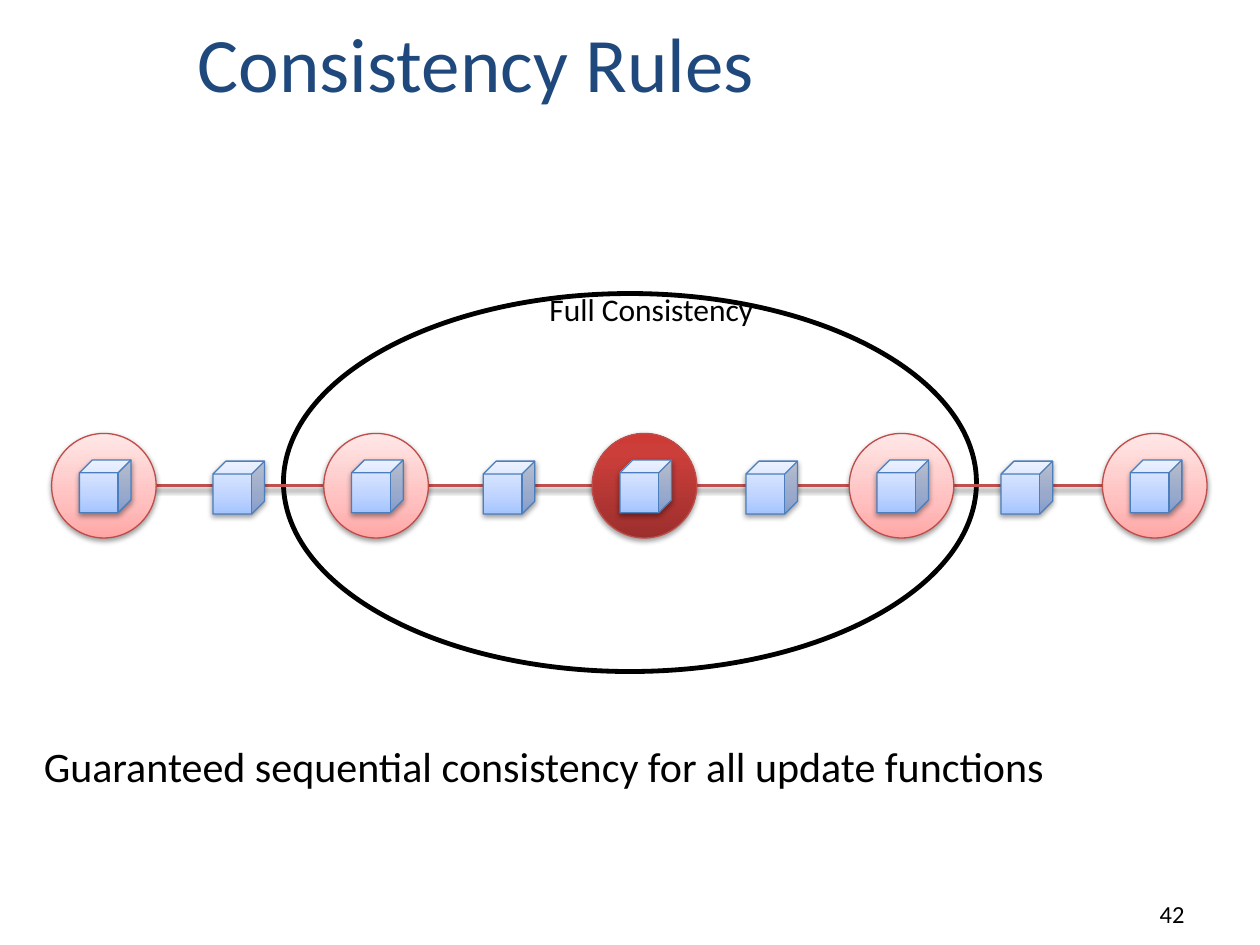
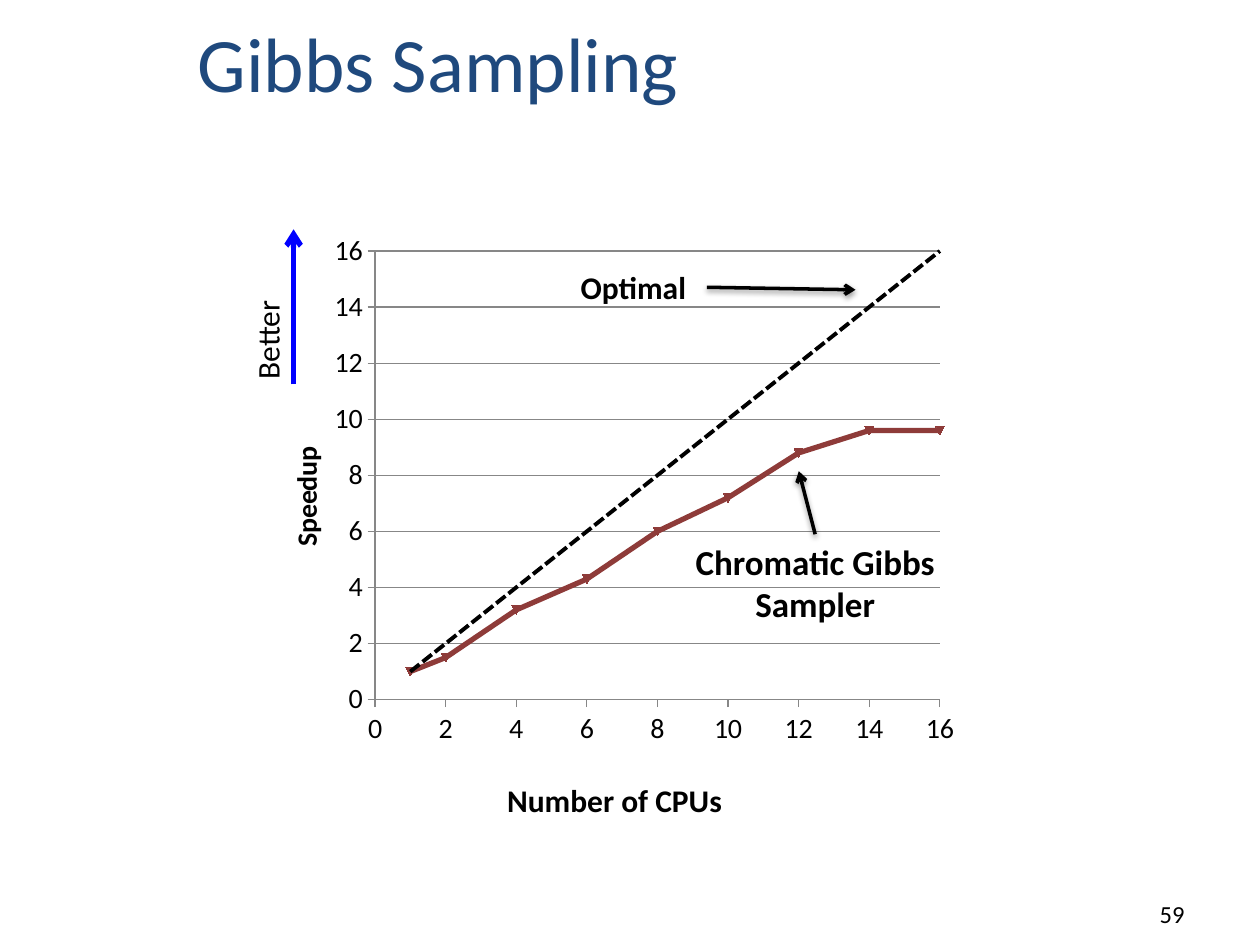
from lxml import etree
from pptx import Presentation
from pptx.chart.data import XyChartData
from pptx.dml.color import RGBColor
from pptx.enum import chart as ch, dml, shapes, text
from pptx.oxml import parse_xml
from pptx.oxml.ns import nsdecls, qn
from pptx.util import Inches, Pt

FONT = "Calibri"
COLORS = {
    "title": "1F497D", "text": "000000", "white": "FFFFFF", "edge": "C0504D",
    "vertex_line": "BF4C48", "cube_line": "4B7EBC", "better": "0000FF",
    "sampler": "8E3B39", "axis": "878787",
}
GRADIENTS = {
    "vertex": ((0, "FFA6A5"), (35, "FFC0BF"), (100, "FFE7E7")),
    "center": ((0, "9C2F2D"), (80, "CB3E3A"), (100, "CE3B37")),
    "cube": ((0, "A4C4FF"), (35, "BFD4FF"), (100, "E6EEFF")),
}
LEFT, CENTER, RIGHT = text.PP_ALIGN.LEFT, text.PP_ALIGN.CENTER, text.PP_ALIGN.RIGHT


def rgb(name):
    """Return a palette colour."""
    return RGBColor.from_string(COLORS[name])


def inches(*lengths):
    """Convert lengths to Inches."""
    return [Inches(n) for n in lengths]


def style_font(font, size, color="text", bold=False):
    """Set the deck's font with a size, colour and weight."""
    font.name, font.size, font.bold = FONT, Pt(size), bold
    font.color.rgb = rgb(color)


def style_line(line, color, width):
    """Set a solid line."""
    line.color.rgb = rgb(color)
    line.width = Pt(width)


def set_effects(sp, shadow=True):
    """Give a shape or connector a soft drop shadow, or none."""
    effects = etree.SubElement(sp._element.spPr, qn("a:effectLst"))
    if shadow:
        effects.append(parse_xml(
            f'<a:outerShdw {nsdecls("a")} blurRad="40000" dist="20000" dir="5400000" '
            'rotWithShape="0"><a:srgbClr val="000000"><a:alpha val="38000"/>'
            '</a:srgbClr></a:outerShdw>'))


def fill_gradient(sp, stops):
    """Fill a shape with a gradient running from bottom to top."""
    sp.fill.background()
    spPr = sp._element.spPr
    gs = "".join(f'<a:gs pos="{pos * 1000}"><a:srgbClr val="{color}"/></a:gs>'
                 for pos, color in stops)
    spPr.replace(spPr.find(qn("a:noFill")), parse_xml(
        f'<a:gradFill {nsdecls("a")} rotWithShape="1"><a:gsLst>{gs}</a:gsLst>'
        '<a:lin ang="16200000" scaled="0"/></a:gradFill>'))


def add_label(s, box, lines, size, bold=False, align=LEFT, wrap=True,
              anchor=text.MSO_ANCHOR.TOP):
    """Add a text box with one paragraph per line."""
    sp = s.shapes.add_textbox(*inches(*box))
    tf = sp.text_frame
    tf.word_wrap, tf.vertical_anchor = wrap, anchor
    tf.text = "\n".join(lines)
    for p in tf.paragraphs:
        p.alignment = align
        style_font(p.font, size, bold=bold)
    return sp


def add_line(s, start, end, color, width, arrow=False, shadow=True):
    """Add a straight line or arrow."""
    sp = s.shapes.add_connector(shapes.MSO_CONNECTOR.STRAIGHT, *inches(*start, *end))
    style_line(sp.line, color, width)
    if arrow:
        etree.SubElement(sp.line._get_or_add_ln(), qn("a:tailEnd"), type="arrow")
    set_effects(sp, shadow)


def add_glossy(s, kind, box, gradient, line):
    """Add a gradient shape with a thin outline and a shadow."""
    sp = s.shapes.add_shape(kind, *inches(*box))
    fill_gradient(sp, GRADIENTS[gradient])
    style_line(sp.line, line, 0.75)
    set_effects(sp)


def add_cube(s, x, y):
    """Add one data cube."""
    add_glossy(s, shapes.MSO_SHAPE.CUBE, (x, y, 0.41, 0.42), "cube", "cube_line")


def add_base(prs, title, number):
    """Add a slide with its title and page number."""
    s = prs.slides.add_slide(prs.slide_layouts.get_by_name("Title Only"))
    sp = s.shapes.title
    sp.left, sp.top, sp.width, sp.height = inches(1.47, 0.08, 8.2, 0.83)
    tf = sp.text_frame
    tf.text = title
    tf.vertical_anchor = text.MSO_ANCHOR.BOTTOM
    tf.auto_size = text.MSO_AUTO_SIZE.NONE
    p = tf.paragraphs[0]
    p.alignment = LEFT
    style_font(p.font, 44, "title")
    add_label(s, (7.42, 6.92, 2.08, 0.5), [number], 14, align=RIGHT,
              anchor=text.MSO_ANCHOR.BOTTOM)
    return s


def add_scope(s, x, y, w, h):
    """Outline the consistency scope and name it."""
    sp = s.shapes.add_shape(shapes.MSO_SHAPE.OVAL, *inches(x, y, w, h))
    sp.fill.solid()
    sp.fill.fore_color.rgb = rgb("white")
    style_line(sp.line, "text", 2.75)
    sp.shadow.inherit = False
    add_label(s, (x + 0.92, y - 0.08, 4, 0.4), ["Full Consistency"], 18,
              align=CENTER, wrap=False)


def add_graph(s, x, y, offsets, size=0.83):
    """Draw a chain of vertices with a cube on each vertex and edge."""
    mid = y + size / 2
    add_line(s, (x + size, mid), (x + offsets[-1], mid), "edge", 2)
    for i, offset in enumerate(offsets):
        gradient = "center" if i == len(offsets) // 2 else "vertex"
        add_glossy(s, shapes.MSO_SHAPE.OVAL, (x + offset, y, size, size),
                   gradient, "vertex_line")
        add_cube(s, x + offset + 0.22, y + 0.21)
    for a, b in zip(offsets, offsets[1:]):
        add_cube(s, x + (a + b) / 2 + 0.2, y + 0.22)


def place(element, before, x, y, w=None, h=None):
    """Add a manual chart layout ahead of the named children."""
    sizes = "" if w is None else f'<c:w val="{w}"/><c:h val="{h}"/>'
    target = '<c:layoutTarget val="inner"/>' if sizes else ""
    for old in element.findall(qn("c:layout")):
        element.remove(old)
    layout = parse_xml(
        f'<c:layout {nsdecls("c")}><c:manualLayout>{target}<c:xMode val="edge"/>'
        f'<c:yMode val="edge"/><c:x val="{x}"/><c:y val="{y}"/>{sizes}'
        '</c:manualLayout></c:layout>')
    follower = next(e for e in element if e.tag in [qn(t) for t in before])
    follower.addprevious(layout)


def style_axis(axis, title, size, x, y):
    """Scale an axis from 0 to 16 and title it."""
    axis.minimum_scale, axis.maximum_scale, axis.major_unit = 0, 16, 2
    axis.major_tick_mark = ch.XL_TICK_MARK.OUTSIDE
    axis.minor_tick_mark = ch.XL_TICK_MARK.NONE
    style_line(axis.format.line, "axis", 0.75)
    style_font(axis.tick_labels.font, 16)
    axis.tick_labels.number_format = "General"
    axis.tick_labels.number_format_is_linked = False
    tf = axis.axis_title.text_frame
    tf.text = title
    style_font(tf.paragraphs[0].font, size, bold=True)
    place(axis.axis_title._element, ["c:overlay", "c:spPr", "c:txPr"], x, y)


def add_speedup_chart(s, x, y, w, h):
    """Plot optimal and measured speedup against CPUs."""
    cpus = [1, 2, 4, 6, 8, 10, 12, 14, 16]
    data = XyChartData()
    for name, speedups in (("Series 1", cpus),
                           ("Series 2", [1, 1.5, 3.2, 4.3, 6, 7.2, 8.8, 9.6, 9.6])):
        series = data.add_series(name)
        for point in zip(cpus, speedups):
            series.add_data_point(*point)
    chart = s.shapes.add_chart(ch.XL_CHART_TYPE.XY_SCATTER_LINES_NO_MARKERS,
                               *inches(x, y, w, h), data).chart
    chart.has_legend = chart.has_title = False
    style_font(chart.font, 18)
    plot = chart.plots[0]
    plot.vary_by_categories = False
    optimal, sampler = plot.series
    for series, color, width in ((optimal, "text", 2.25), (sampler, "sampler", 3)):
        series.smooth = False
        style_line(series.format.line, color, width)
    optimal.format.line.dash_style = dml.MSO_LINE.SQUARE_DOT
    sampler.marker.style = ch.XL_MARKER_STYLE.AUTOMATIC
    sampler.marker.size = 5
    sampler.marker.format.fill.solid()
    sampler.marker.format.fill.fore_color.rgb = rgb("edge")
    style_line(sampler.marker.format.line, "sampler", 0.75)
    style_axis(chart.category_axis, "Number of CPUs", 18, 0.35, 0.9)
    style_axis(chart.value_axis, "Speedup", 16, 0.05, 0.37)
    body = chart.value_axis.axis_title.text_frame._txBody.bodyPr
    body.set("rot", "-5400000")
    body.set("vert", "horz")
    chart.category_axis.has_major_gridlines = False
    chart.value_axis.has_major_gridlines = True
    style_line(chart.value_axis.major_gridlines.format.line, "axis", 0.75)
    place(plot._element.getparent(), ["c:scatterChart"], 0.177, 0.065, 0.773, 0.718)


def add_callouts(s, x, y):
    """Name the curves and point upward for better."""
    add_label(s, (x + 2.56, y + 0.41, 1.11, 0.4), ["Optimal"], 18, bold=True)
    add_line(s, (x + 3.66, y + 0.61), (x + 4.84, y + 0.63), "text", 2, arrow=True)
    add_line(s, (x + 0.38, y + 1.38), (x + 0.38, y + 0.15), "better", 3,
             arrow=True, shadow=False)
    better = add_label(s, (x - 0.46, y + 0.53, 1.34, 0.48), ["Better"], 18)
    better.rotation = 270
    add_line(s, (x + 4.52, y + 2.57), (x + 4.39, y + 2.07), "text", 2, arrow=True)
    add_label(s, (x + 3.43, y + 2.57, 2.18, 0.77), ["Chromatic Gibbs", "Sampler"],
              20, bold=True, align=CENTER, wrap=False)


def consistency_slide(prs):
    """Build the consistency rules slide."""
    s = add_base(prs, "Consistency Rules", "42")
    add_scope(s, 2.25, 2.33, 5.5, 3)
    add_graph(s, 0.41, 3.44, [0, 2.16, 4.29, 6.33, 8.34])
    add_label(s, (0.25, 5.83, 9.33, 0.5),
              ["Guaranteed sequential consistency for all update functions"], 24)


def sampling_slide(prs):
    """Build the Gibbs sampling slide."""
    s = add_base(prs, "Gibbs Sampling", "59")
    x, y = 1.95, 1.67
    add_speedup_chart(s, x, y, 5.8, 4.96)
    add_callouts(s, x, y)


def main():
    """Build and save the deck."""
    prs = Presentation()
    prs.slide_width, prs.slide_height = inches(10, 7.5)
    consistency_slide(prs)
    sampling_slide(prs)
    prs.save("out.pptx")


if __name__ == "__main__":
    main()
